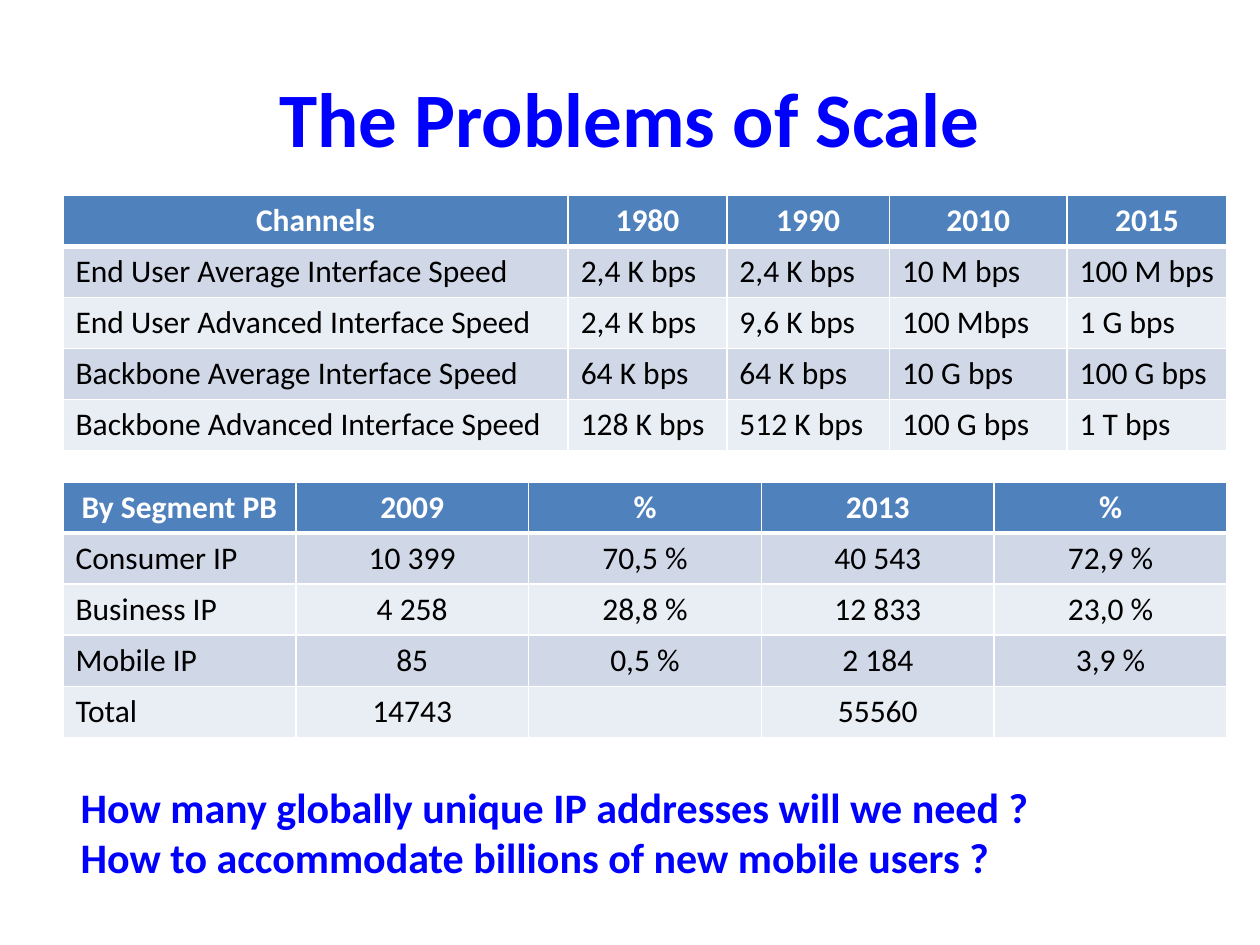
from lxml.etree import SubElement
from pptx import Presentation
from pptx.dml.color import RGBColor
from pptx.enum.text import MSO_ANCHOR as Anchor, PP_ALIGN as Align
from pptx.oxml.ns import qn
from pptx.util import Pt

FONT = "Calibri"
BLUE = RGBColor(0x00, 0x00, 0xFF)
WHITE = RGBColor(0xFF, 0xFF, 0xFF)
BLACK = RGBColor(0x00, 0x00, 0x00)
HEADER_FILL = RGBColor(0x4F, 0x81, 0xBD)
BAND_FILLS = (RGBColor(0xD0, 0xD8, 0xE8), RGBColor(0xE9, 0xED, 0xF4))

TABLE_LEFT = 36
ROW_HEIGHT = 29.2

CHANNELS = [
    ["Channels", "1980", "1990", "2010", "2015"],
    ["End User Average Interface Speed", "2,4 K bps", "2,4 K bps", "10 M bps", "100 M bps"],
    ["End User Advanced Interface Speed", "2,4 K bps", "9,6 K bps", "100 Mbps", "1 G bps"],
    ["Backbone Average Interface Speed", "64 K bps", "64 K bps", "10 G bps", "100 G bps"],
    ["Backbone Advanced Interface Speed", "128 K bps", "512 K bps", "100 G bps", "1 T bps"],
]
SEGMENTS = [
    ["By Segment PB", "2009", "%", "2013", "%"],
    ["Consumer IP", "10 399", "70,5 %", "40 543", "72,9 %"],
    ["Business IP", "4 258", "28,8 %", "12 833", "23,0 %"],
    ["Mobile IP", "85", "0,5 %", "2 184", "3,9 %"],
    ["Total", "14743", "", "55560", ""],
]


def write_text(para, text, size=18, color=BLACK, bold=False, align=Align.LEFT):
    para.alignment = align
    span = para.add_run()
    span.text = text
    span.font.name = FONT
    span.font.size = Pt(size)
    span.font.bold = bold
    span.font.color.rgb = color


def add_text(page, left, top, width, height, lines, anchor=Anchor.TOP, **style):
    box = page.shapes.add_textbox(Pt(left), Pt(top), Pt(width), Pt(height))
    frame = box.text_frame
    frame.word_wrap = True
    frame.vertical_anchor = anchor
    for index, line in enumerate(lines):
        para = frame.add_paragraph() if index else frame.paragraphs[0]
        write_text(para, line, **style)


def set_borders(cell, top, bottom):
    properties = cell._tc.get_or_add_tcPr()
    for side, width in (("L", 1), ("R", 1), ("T", top), ("B", bottom)):
        line = SubElement(properties, qn(f"a:ln{side}"), w=str(Pt(width)))
        fill = SubElement(line, qn("a:solidFill"))
        SubElement(fill, qn("a:srgbClr"), val=str(WHITE))


def add_grid(page, top, widths, rows, value_align):
    frame = page.shapes.add_table(
        len(rows), len(widths), Pt(TABLE_LEFT), Pt(top),
        Pt(sum(widths)), Pt(ROW_HEIGHT * len(rows)))
    table = frame.table
    for column, width in zip(table.columns, widths):
        column.width = Pt(width)
    for r, values in enumerate(rows):
        table.rows[r].height = Pt(ROW_HEIGHT)
        header = r == 0
        for c, value in enumerate(values):
            cell = table.cell(r, c)
            # A thick rule separates the header from the body
            set_borders(cell, top=3 if r == 1 else 1, bottom=3 if header else 1)
            cell.fill.solid()
            cell.fill.fore_color.rgb = HEADER_FILL if header else BAND_FILLS[(r - 1) % 2]
            if header:
                align = Align.CENTER
            else:
                align = value_align if c else Align.LEFT
            if value:
                write_text(cell.text_frame.paragraphs[0], value, bold=header,
                           color=WHITE if header else BLACK, align=align)


def main():
    deck = Presentation()
    deck.slide_width, deck.slide_height = Pt(720), Pt(540)
    page = deck.slides.add_slide(deck.slide_layouts[6])

    # Title
    add_text(page, 36, 21.6, 648, 90, ["The Problems of Scale"], anchor=Anchor.MIDDLE,
             size=44, color=BLUE, bold=True, align=Align.CENTER)

    # Interface speeds, then traffic by segment
    add_grid(page, 111.6, [288.7, 90.7, 92.9, 101.5, 91.4], CHANNELS, Align.LEFT)
    add_grid(page, 275.4, [133.04] * 5, SEGMENTS, Align.CENTER)

    # Closing questions
    add_text(page, 39, 442.8, 662.4, 65.5,
             ["How many globally unique IP addresses will we need ?",
              "How to accommodate billions of new mobile users ?"],
             size=24, color=BLUE, bold=True)

    deck.save("out.pptx")


if __name__ == "__main__":
    main()
